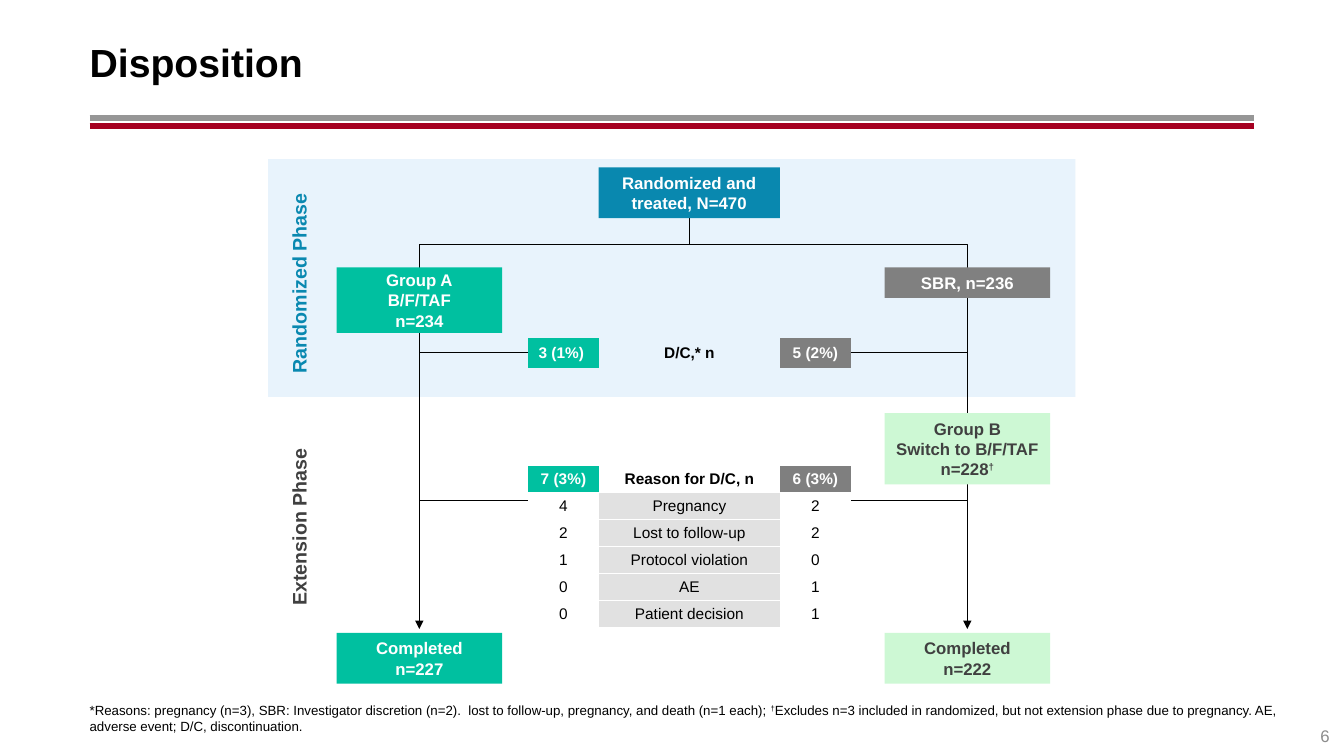
from lxml.etree import SubElement
from pptx import Presentation
from pptx.dml.color import RGBColor
from pptx.enum.shapes import MSO_CONNECTOR, MSO_SHAPE
from pptx.enum.text import MSO_ANCHOR, PP_ALIGN
from pptx.oxml.ns import qn
from pptx.util import Cm, Pt

COLOURS = {
    "black": "000000", "white": "FFFFFF", "dark": "404040", "number": "8C8C8C",
    "rule grey": "969696", "rule red": "A50021", "panel": "E8F3FC",
    "blue": "0988AF", "label blue": "0988B0", "teal": "00C0A0", "grey": "808080",
    "mint": "CDF8D4", "cell grey": "7F7F7F", "reason": "E1E1E1",
}
COLOURS = {name: RGBColor.from_string(value) for name, value in COLOURS.items()}


def write(frame, lines, size, colour, bold=False, align=PP_ALIGN.CENTER):
    """Fill a text frame, one paragraph per line, with daggers raised."""
    for number, line in enumerate(lines):
        para = frame.add_paragraph() if number else frame.paragraphs[0]
        para.alignment = align
        for piece in filter(None, line.partition("†")):
            span = para.add_run()
            span.text = piece
            looks = {"name": "Arial", "size": Pt(size), "bold": bold}
            for key, value in looks.items():
                setattr(span.font, key, value)
            span.font.color.rgb = COLOURS[colour]
            if piece == "†":
                span.font._element.set("baseline", "30000")


def add_box(middle, top, width, height, fill):
    """Add a plain filled rectangle centred on a vertical axis."""
    box = page.shapes.add_shape(
        MSO_SHAPE.RECTANGLE, Cm(middle - width / 2), Cm(top), Cm(width), Cm(height))
    box.shadow.inherit = False
    box.fill.solid()
    box.fill.fore_color.rgb = COLOURS[fill]
    box.line.fill.background()
    return box


deck = Presentation()
deck.slide_width, deck.slide_height = Cm(33.87), Cm(19.05)
page = deck.slides.add_slide(deck.slide_layouts[5])

# Title
title = page.shapes.title
place = {"left": 2.26, "top": 0.46, "width": 29.36, "height": 2.18}
for key, value in place.items():
    setattr(title, key, Cm(value))
title.text_frame.margin_left = title.text_frame.margin_right = 0
title.text_frame.vertical_anchor = MSO_ANCHOR.MIDDLE
write(title.text_frame, ["Disposition"], 28, "black", True, PP_ALIGN.LEFT)

# Panel, rules and flow lines
LEFT_MID, ROOT_MID, RIGHT_MID = 10.57, 17.37, 24.38
FORK, ARROW_END = 6.17, 15.85
TABLE_LEFT, TABLE_RIGHT = 13.31, 21.44
FIRST_EXIT, SECOND_EXIT = 8.89, 12.62
add_box(16.93, 4.01, 20.35, 5.99, "panel")
for x1, y1, x2, y2, colour, width in (
    (2.26, 2.97, 31.6, 2.97, "rule grey", 4.25),
    (2.26, 3.18, 31.6, 3.18, "rule red", 4.25),
    (RIGHT_MID, FIRST_EXIT, 21.31, FIRST_EXIT, "black", 0.75),
    (RIGHT_MID, SECOND_EXIT, 21.31, SECOND_EXIT, "black", 0.75),
    (LEFT_MID, FIRST_EXIT, 13.39, FIRST_EXIT, "black", 0.75),
    (LEFT_MID, SECOND_EXIT, 13.39, SECOND_EXIT, "black", 0.75),
    (ROOT_MID, 5.48, ROOT_MID, FORK, "black", 0.75),
):
    line = page.shapes.add_connector(
        MSO_CONNECTOR.STRAIGHT, Cm(x1), Cm(y1), Cm(x2), Cm(y2))
    line.line.color.rgb = COLOURS[colour]
    line.line.width = Pt(width)
    SubElement(line._element.spPr, qn("a:effectLst"))
trunk = line

# Two-armed arrow: a square bracket turned to open downwards
span_across, drop = RIGHT_MID - LEFT_MID, ARROW_END - FORK
fork = page.shapes.add_shape(
    MSO_SHAPE.RIGHT_BRACKET,
    Cm((LEFT_MID + RIGHT_MID - drop) / 2), Cm((FORK + ARROW_END - span_across) / 2),
    Cm(drop), Cm(span_across))
fork.adjustments[0] = 0
fork.rotation = 90
fork._element.spPr.get_or_add_xfrm().set("flipH", "1")
fork.shadow.inherit = False
fork.fill.background()
fork.line.color.rgb = COLOURS["black"]
fork.line.width = Pt(0.75)
for end in ("a:headEnd", "a:tailEnd"):
    SubElement(fork.line._get_or_add_ln(), qn(end), type="triangle")

# Flow boxes
BOX_WIDTH, ROOT_WIDTH = 4.17, 4.57
for middle, top, width, height, fill, ink, lines in (
    (LEFT_MID, 6.74, BOX_WIDTH, 1.65, "teal", "white",
     ["Group A", "B/F/TAF", "n=234"]),
    (RIGHT_MID, 10.41, BOX_WIDTH, 1.8, "mint", "dark",
     ["Group B", "Switch to B/F/TAF", "n=228†"]),
    (LEFT_MID, 15.95, BOX_WIDTH, 1.28, "teal", "white", ["Completed", "n=227"]),
    (RIGHT_MID, 15.95, BOX_WIDTH, 1.28, "mint", "dark", ["Completed", "n=222"]),
    (RIGHT_MID, 6.74, BOX_WIDTH, 0.77, "grey", "white", ["SBR, n=236"]),
    (ROOT_MID, 4.22, ROOT_WIDTH, 1.28, "blue", "white",
     ["Randomized and treated, N=470"]),
):
    box = add_box(middle, top, width, height, fill)
    box.text_frame.word_wrap = True
    box.text_frame.vertical_anchor = MSO_ANCHOR.MIDDLE
    write(box.text_frame, lines, 12, ink, True)
trunk.begin_connect(box, 2)

# Discontinuation tables
randomized_rows = [("3 (1%) ", "D/C,* n", "5 (2%)")]
extension_rows = [
    ("7 (3%)", "Reason for D/C, n", "6 (3%)"),
    ("4", "Pregnancy", "2"),
    ("2", "Lost to follow-up", "2"),
    ("1", "Protocol violation", "0"),
    ("0", "AE", "1"),
    ("0", "Patient decision", "1"),
]
for rows, top, row_height in ((randomized_rows, 8.51, 0.76),
                              (extension_rows, 11.74, 0.68)):
    frame = page.shapes.add_table(
        len(rows), 3, Cm(TABLE_LEFT), Cm(top),
        Cm(TABLE_RIGHT - TABLE_LEFT), Cm(row_height * len(rows)))
    table = frame.table
    table.first_row = table.horz_banding = False
    style = table._tbl.tblPr.find(qn("a:tableStyleId"))
    style.text = "{2D5ABB26-0587-4C30-8999-92F81FD0307C}"
    for column, width in zip(table.columns, (1.78, ROOT_WIDTH, 1.78)):
        column.width = Cm(width)
    for r, values in enumerate(rows):
        table.rows[r].height = Cm(row_height)
        header_middle = "white" if rows is extension_rows else None
        fills = ("white", "reason", "white") if r else ("teal", header_middle, "cell grey")
        inks = ("black",) * 3 if r else ("white", "black", "white")
        for c, value in enumerate(values):
            cell = table.cell(r, c)
            for side in ("left", "right", "top", "bottom"):
                setattr(cell, f"margin_{side}", 0)
            cell.vertical_anchor = MSO_ANCHOR.MIDDLE
            if rows is extension_rows:
                for edge in ("a:lnT", "a:lnB"):
                    border = SubElement(
                        cell._tc.get_or_add_tcPr(), qn(edge), w=str(Pt(1)))
                    paint = SubElement(border, qn("a:solidFill"))
                    SubElement(paint, qn("a:srgbClr"), val=str(COLOURS["white"]))
            if fills[c]:
                cell.fill.solid()
                cell.fill.fore_color.rgb = COLOURS[fills[c]]
            else:
                cell.fill.background()
            write(cell.text_frame, [value], 11, inks[c], bold=r == 0)

# Phase labels, footnote and page number
footnote = (
    "*Reasons: pregnancy (n=3), SBR: Investigator discretion (n=2).  lost to "
    "follow-up, pregnancy, and death (n=1 each); †Excludes n=3 included in "
    "randomized, but not extension phase due to pregnancy. AE, adverse event; "
    "D/C, discontinuation.")
MIDDLE, BOTTOM = MSO_ANCHOR.MIDDLE, MSO_ANCHOR.BOTTOM
for text, left, top, width, height, turn, size, ink, bold, align, anchor, inset in (
    ("Randomized Phase", 4.93, 6.71, 5.2, 0.86, 270, 14, "label blue", True,
     PP_ALIGN.CENTER, MIDDLE, 0.25),
    ("Extension Phase", 5.13, 12.85, 4.8, 0.86, 270, 14, "dark", True,
     PP_ALIGN.CENTER, MIDDLE, 0.25),
    (footnote, 2.26, 17.35, 30.5, 1.27, 0, 9.5, "black", False,
     PP_ALIGN.LEFT, BOTTOM, 0),
    ("6", 31.6, 18.03, 2.16, 1.02, 0, 12, "number", False,
     PP_ALIGN.RIGHT, MIDDLE, 0.25),
):
    label = page.shapes.add_textbox(Cm(left), Cm(top), Cm(width), Cm(height))
    label.rotation = turn
    layout = {"word_wrap": True, "vertical_anchor": anchor,
              "margin_left": Cm(inset), "margin_right": Cm(inset)}
    for key, value in layout.items():
        setattr(label.text_frame, key, value)
    write(label.text_frame, [text], size, ink, bold, align)

deck.save("out.pptx")
